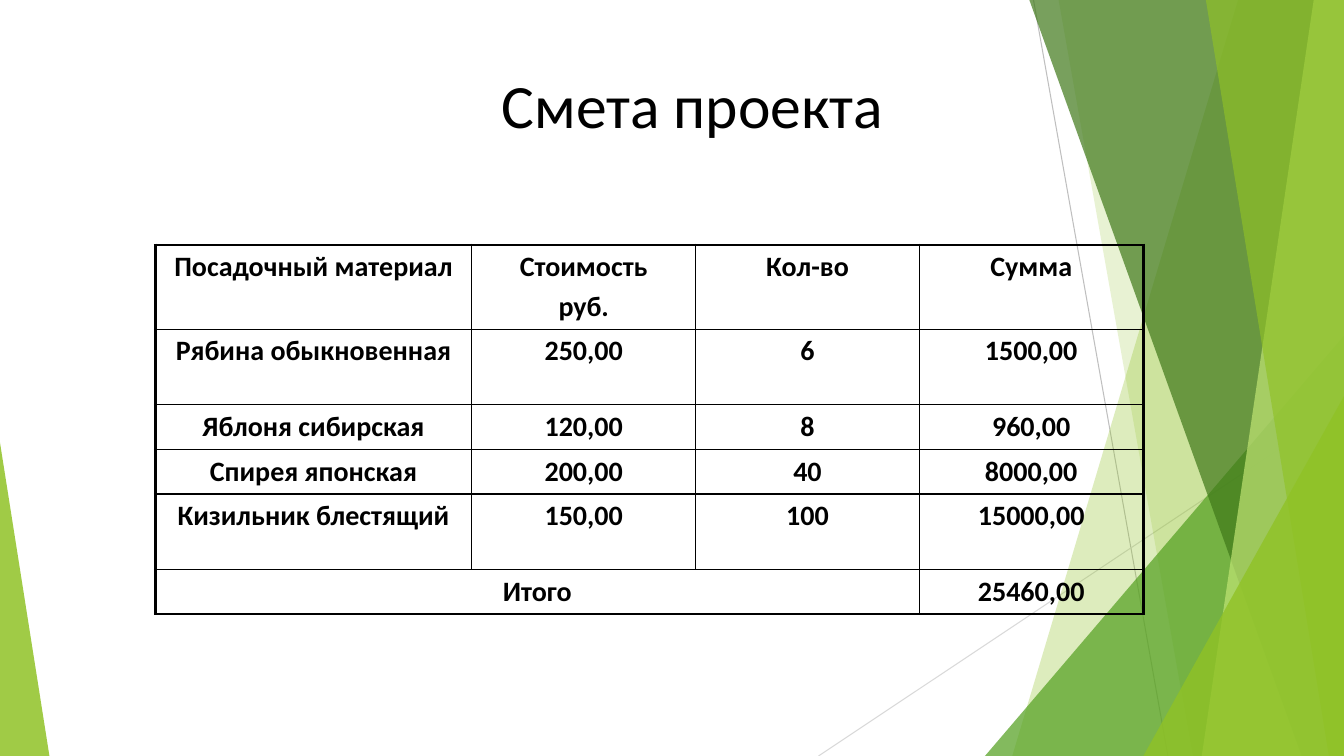
from lxml.etree import SubElement
from pptx import Presentation
from pptx.dml.color import RGBColor
from pptx.enum.shapes import MSO_CONNECTOR, MSO_SHAPE
from pptx.enum.text import MSO_ANCHOR, PP_ALIGN
from pptx.oxml.ns import qn
from pptx.util import Inches, Pt

COLORS = {
    "text": "000000", "border": "000000",
    "dark_rule": "BFBFBF", "light_rule": "D9D9D9",
    "lime": "90C226", "green": "54A021", "forest": "3F7819", "pale": "C0E474",
}

# Left edge of each right-hand band at the top and bottom of the slide
BANDS = [
    (92.12, 75.32, "lime", 30),
    (78.77, 88.75, "lime", 20),
    (76.59, 96.85, "forest", 70),
    (97.75, 89.42, "pale", 70),
    (89.72, 98.87, "lime", 65),
]

COL_WIDTHS = [23.56, 16.65, 16.65, 16.65]
ROW_HEIGHTS = [11.1, 10, 5.9, 5.9, 10, 5.9]
ESTIMATE = [
    ["Посадочный материал", "Стоимость\nруб.", "Кол-во", "Сумма"],
    ["Рябина обыкновенная", "250,00", "6", "1500,00"],
    ["Яблоня сибирская", "120,00", "8", "960,00"],
    ["Спирея японская", "200,00", "40", "8000,00"],
    ["Кизильник блестящий", "150,00", "100", "15000,00"],
    ["Итого", "", "", "25460,00"],
]


class Deck:
    """Style and current slide; lengths are percentages of the slide's size."""

    font = "Calibri"
    thin, thick = Pt(0.96), Pt(2.21)

    def __init__(self):
        self.prs = Presentation()
        self.prs.slide_width, self.prs.slide_height = Inches(13.33), Inches(7.5)
        self.s = self.prs.slides.add_slide(self.prs.slide_layouts[5])

    def x(self, share):
        return round(self.prs.slide_width * share / 100)

    def y(self, share):
        return round(self.prs.slide_height * share / 100)

    def box(self, left, top, width, height):
        return self.x(left), self.y(top), self.x(width), self.y(height)

    def color(self, name):
        return RGBColor.from_string(COLORS[name])

    def paint(self, sp, color, opacity):
        """Fill a shape with a partly transparent colour, without line or shadow."""
        sp.shadow.inherit = False
        sp.line.fill.background()
        sp.fill.solid()
        sp.fill.fore_color.rgb = self.color(color)
        clr = sp.element.spPr.find(f"{qn('a:solidFill')}/{qn('a:srgbClr')}")
        SubElement(clr, qn("a:alpha"), val=str(opacity * 1000))

    def rule(self, x1, y1, x2, y2, color):
        line = self.s.shapes.add_connector(
            MSO_CONNECTOR.STRAIGHT, self.x(x1), self.y(y1), self.x(x2), self.y(y2))
        line.line.color.rgb = self.color(color)
        line.line.width = Pt(0.75)
        SubElement(line.element.spPr, qn("a:effectLst"))

    def band(self, top_x, bottom_x, color, opacity):
        """Draw a slanted band that reaches the slide's right edge."""
        ff = self.s.shapes.build_freeform(self.x(top_x), 0)
        ff.add_line_segments([(self.x(px), self.y(py)) for px, py in
                              [(100, 0), (100, 100), (bottom_x, 100)]])
        self.paint(ff.convert_to_shape(), color, opacity)

    def triangle(self, left, top, width, apex, color, opacity):
        """Draw a triangle that stands on the slide's bottom edge."""
        sp = self.s.shapes.add_shape(
            MSO_SHAPE.ISOSCELES_TRIANGLE, *self.box(left, top, width, 100 - top))
        sp.adjustments[0] = apex
        self.paint(sp, color, opacity)

    def set_text(self, tf, text, size, bold=False, before=0):
        tf.text = text
        for p in tf.paragraphs:
            p.alignment = PP_ALIGN.CENTER
            p.space_before = Pt(before)
            p.font.name, p.font.size, p.font.bold = self.font, Pt(size), bold
            p.font.color.rgb = self.color("text")

    def title(self, text, *box):
        sp = self.s.shapes.title
        sp.left, sp.top, sp.width, sp.height = self.box(*box)
        tf = sp.text_frame
        tf.vertical_anchor = MSO_ANCHOR.MIDDLE
        self.set_text(tf, text, 44)

    def border(self, cell, side, width):
        ln = SubElement(cell._tc.get_or_add_tcPr(), qn(f"a:ln{side}"), w=str(width))
        fill = SubElement(ln, qn("a:solidFill"))
        SubElement(fill, qn("a:srgbClr"), val=COLORS["border"])

    def table(self, left, top, widths, heights, rows):
        """Draw an unfilled table with a thick outer frame and a merged total row."""
        table = self.s.shapes.add_table(
            len(rows), len(widths),
            *self.box(left, top, sum(widths), sum(heights))).table
        table.first_row = table.horz_banding = False
        for col, width in zip(table.columns, widths):
            col.width = self.x(width)
        for row, height in zip(table.rows, heights):
            row.height = self.y(height)
        last_row, last_col = len(rows) - 1, len(widths) - 1
        table.cell(last_row, 0).merge(table.cell(last_row, last_col - 1))
        for i, row in enumerate(rows):
            for j, text in enumerate(row):
                cell = table.cell(i, j)
                outer = {"L": j == 0, "R": j == last_col,
                         "T": i == 0, "B": i == last_row}
                for side, is_outer in outer.items():
                    self.border(cell, side, self.thick if is_outer else self.thin)
                cell.fill.background()
                if not cell.is_spanned:
                    self.set_text(cell.text_frame, text, 20, bold=True, before=4)


def main():
    deck = Deck()
    deck.rule(76.9, 0, 86.9, 100, "dark_rule")
    deck.rule(100, 53.7, 60.9, 100, "light_rule")
    for band in BANDS[:2]:
        deck.band(*band)
    deck.triangle(73.29, 44.4, 26.71, 1, "green", 72)
    for band in BANDS[2:]:
        deck.band(*band)
    deck.triangle(85.07, 52.4, 14.93, 1, "lime", 80)
    deck.triangle(0, 58.53, 3.68, 0, "lime", 85)
    deck.title("Смета проекта", 8.4, 4.13, 86.27, 19.33)
    deck.table(11.55, 32.4, COL_WIDTHS, ROW_HEIGHTS, ESTIMATE)
    deck.prs.save("out.pptx")


if __name__ == "__main__":
    main()
